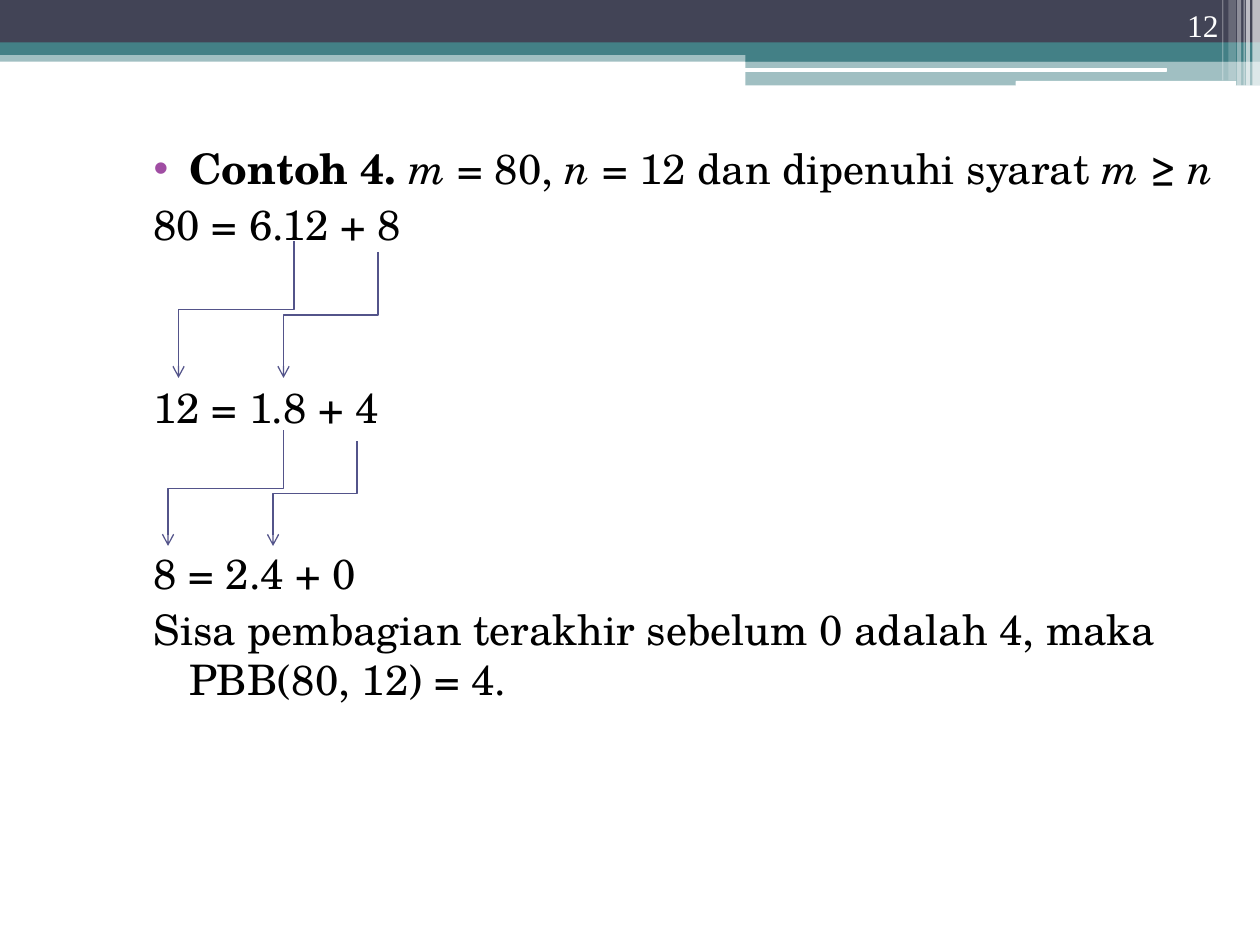
"""Builds a slide that works through Euclid's algorithm for PBB(80, 12)."""
from lxml import etree
from pptx import Presentation
from pptx.dml.color import RGBColor
from pptx.enum.shapes import MSO_CONNECTOR, MSO_SHAPE
from pptx.enum.text import MSO_ANCHOR, MSO_AUTO_SIZE, PP_ALIGN
from pptx.oxml.ns import qn
from pptx.util import Pt

RECT, ROUND = MSO_SHAPE.RECTANGLE, MSO_SHAPE.ROUNDED_RECTANGLE
ELBOW = MSO_CONNECTOR.ELBOW
TOP, BOTTOM = MSO_ANCHOR.TOP, MSO_ANCHOR.BOTTOM
RIGHT, LEFT = PP_ALIGN.RIGHT, PP_ALIGN.LEFT
NO_FIT = MSO_AUTO_SIZE.NONE
WHITE = RGBColor(0xFF, 0xFF, 0xFF)
BLACK = RGBColor(0, 0, 0)
SLATE = RGBColor(0x42, 0x44, 0x56)
TEAL = RGBColor(0x43, 0x80, 0x86)
INDIGO = RGBColor(0x53, 0x54, 0x8A)
PURPLE = RGBColor(0xA0, 0x4D, 0xA3)


def add_child(parent, tag, **attributes):
    return etree.SubElement(parent, qn(tag), attributes)


def set_font(font, **values):
    color = values.pop("color")
    for name, value in values.items():
        setattr(font, name, value)
    font.color.rgb = color


deck = Presentation()
deck.slide_width, deck.slide_height = Pt(720), Pt(540)
page = deck.slides.add_slide(deck.slide_layouts[1])
title = page.shapes.title
title.element.getparent().remove(title.element)
body = page.placeholders[1]

bands = [
    (RECT, 0, 28.8, 720, 6.5, TEAL, 50),
    (RECT, 0, 0, 720, 24.5, SLATE, 100),
    (RECT, 0, 24.2, 720, 7.2, TEAL, 100),
    (RECT, 426, 28.1, 294, 7.2, TEAL, 100),
    (RECT, 426, 34.6, 294, 14.2, TEAL, 50),
    (ROUND, 425.6, 38.9, 241.2, 2.2, WHITE, 100),
    (ROUND, 580.4, 46.2, 126, 2.9, WHITE, 100),
    (RECT, 715.7, 0, 4.3, 49, WHITE, 65),
    (RECT, 712, 0, 2.2, 49, WHITE, 65),
    (RECT, 710.6, 0, 0.7, 49, WHITE, 60),
    (RECT, 707, 0, 2.2, 49, WHITE, 40),
    (RECT, 702, 0, 4.3, 46, WHITE, 20),
    (RECT, 698.4, 0, 0.7, 46, WHITE, 30),
]
for kind, left, top, width, height, color, opacity in bands:
    band = page.shapes.add_shape(kind, Pt(left), Pt(top), Pt(width), Pt(height))
    band.shadow.inherit = False
    band.line.fill.background()
    band.fill.solid()
    band.fill.fore_color.rgb = color
    if opacity < 100:
        tint = band.fill._xPr.find(".//" + qn("a:srgbClr"))
        add_child(tint, "a:alpha", val=str(opacity * 1000))

body.left, body.top, body.width, body.height = Pt(72), Pt(77.8), Pt(631.4), Pt(450)
frame = body.text_frame
frame.word_wrap, frame.auto_size, frame.vertical_anchor = True, NO_FIT, TOP

steps = [
    (0, [("Contoh 4. ", "bold"), ("m", "italic"), (" = 80, ", ""), ("n", "italic"),
         (" = 12 dan dipenuhi syarat ", ""), ("m ", "italic"), ("≥ ", ""), ("n", "italic")]),
    (3, [("80 = 6.12 + 8", "")]),
    (76, [("12 = 1.8 + 4", "")]),
    (66, [("8 = 2.4 + 0", "")]),
    (3, [("Sisa pembagian terakhir sebelum 0 adalah 4, maka PBB(80, 12) = 4.", "")]),
]
for index, (space, spans) in enumerate(steps):
    para = frame.add_paragraph() if index else frame.paragraphs[0]
    properties = para._p.get_or_add_pPr()
    properties.set("marL", str(Pt(28.8)))
    properties.set("indent", str(Pt(-20.2)))
    if index:
        add_child(properties, "a:buNone")
    else:
        bullet_color = add_child(properties, "a:buClr")
        add_child(bullet_color, "a:srgbClr", val=str(PURPLE))
        add_child(properties, "a:buChar", char="•")
    para.space_before, para.alignment = Pt(space), LEFT
    for text, style in spans:
        span = para.add_run()
        span.text = text
        set_font(span.font, name="TeX Gyre Schola", size=Pt(24), color=BLACK,
                 bold=style == "bold", italic=style == "italic")

number = page.shapes.add_textbox(Pt(643.7), Pt(0), Pt(59.8), Pt(28.8))
number.text_frame.word_wrap = True
number.text_frame.vertical_anchor = BOTTOM
para = number.text_frame.paragraphs[0]
para.alignment = RIGHT
span = para.add_run()
span.text = "12"
set_font(span.font, name="Times New Roman", size=Pt(18), color=WHITE)

arrows = [
    (168, 138, 102, 216),
    (216, 144, 162, 216),
    (162, 246, 96, 312),
    (204, 252, 156, 312),
]
for start_x, start_y, end_x, end_y in arrows:
    middle_x, middle_y = (start_x + end_x) / 2, (start_y + end_y) / 2
    half_drop, half_run = (end_y - start_y) / 2, (start_x - end_x) / 2
    arrow = page.shapes.add_connector(
        ELBOW, Pt(middle_x - half_drop), Pt(middle_y - half_run),
        Pt(middle_x + half_drop), Pt(middle_y + half_run))
    arrow.line.color.rgb = INDIGO
    arrow.line.width = Pt(0.75)
    add_child(arrow.line._get_or_add_ln(), "a:tailEnd", type="arrow")
    shape_properties = arrow._element.spPr
    shape_properties.find(qn("a:xfrm")).set("rot", str(90 * 60000))
    add_child(shape_properties, "a:effectLst")

deck.save("out.pptx")
